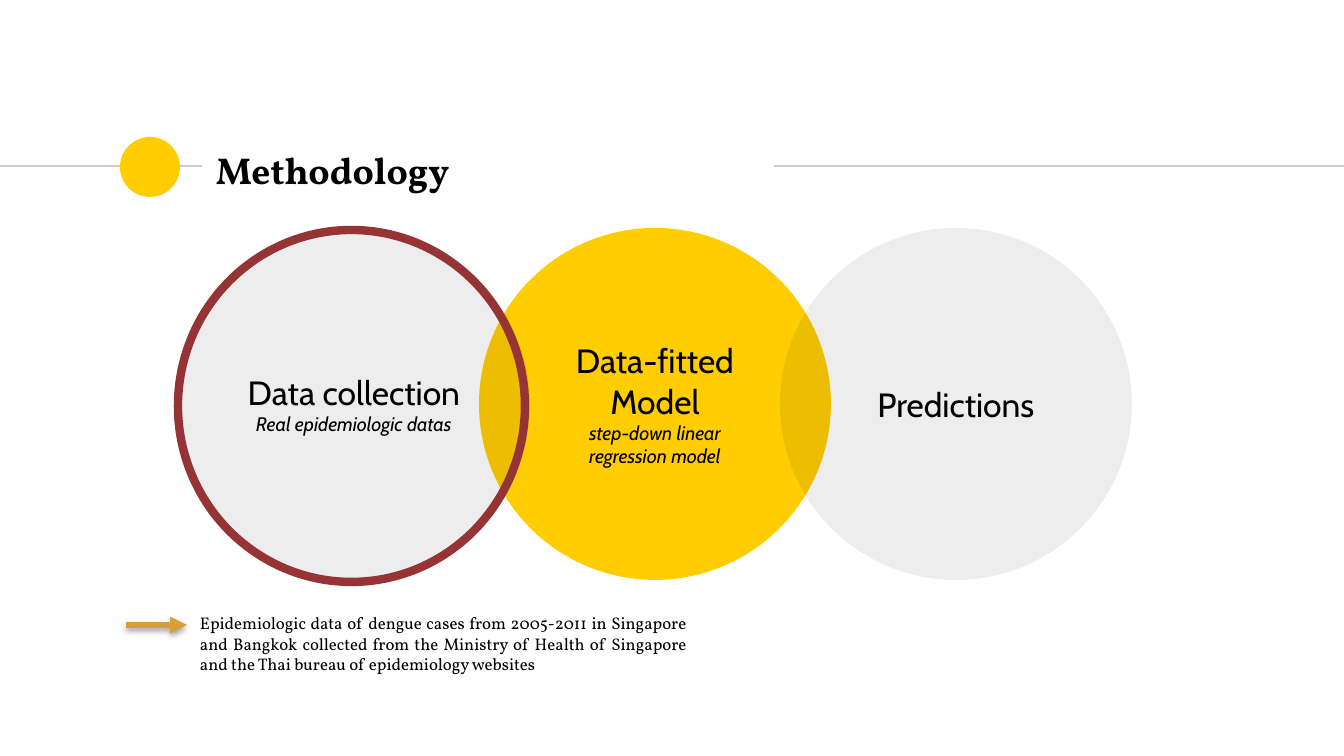
from dataclasses import dataclass
from typing import Optional

from lxml import etree
from pptx import Presentation
from pptx.dml.color import RGBColor
from pptx.enum import shapes, text
from pptx.oxml import ns
from pptx.util import Emu, Pt

EMU_PER_PX = 914400 / 134.4
BLACK = RGBColor(0x00, 0x00, 0x00)
YELLOW = RGBColor(0xFF, 0xCD, 0x00)
RULE_GREY = RGBColor(0xCC, 0xCC, 0xCC)
DARK_RED = RGBColor(0x96, 0x33, 0x34)
OCHRE = RGBColor(0xD8, 0x9F, 0x39)

STEP_LEFT, STEP_TOP, STEP_SIZE, STEP_PITCH = 178, 228, 352, 301
STEP_FONT = {"name": "Cabin", "size": Pt(18)}
DETAIL_FONT = {"name": "Cabin", "size": Pt(10.5), "italic": True}
TITLE_FONT = {"name": "Vollkorn", "size": Pt(20), "bold": True}
NOTE_FONT = {"name": "Vollkorn", "size": Pt(9)}


@dataclass(frozen=True)
class Box:
    left: int
    top: int
    width: int
    height: int

    def emu(self) -> tuple:
        return tuple(px(n) for n in (self.left, self.top, self.width, self.height))


@dataclass(frozen=True)
class Step:
    column: int
    heading: tuple
    detail: tuple
    fill: RGBColor
    opacity: int


STEPS = (
    Step(1, ("Data-fitted", "Model"), ("step-down linear", "regression model"), YELLOW, 100),
    Step(0, ("Data collection",), ("Real epidemiologic datas",), BLACK, 7),
    Step(2, ("Predictions",), (), BLACK, 7),
)
NOTE = (
    "Epidemiologic data of dengue cases from 2005-2011 in Singapore and Bangkok "
    "collected from the Ministry of Health of Singapore and the Thai bureau of "
    "epidemiology websites"
)


def px(length: int) -> Emu:
    return Emu(round(length * EMU_PER_PX))


def add_node(parent, tag: str, **attributes):
    return etree.SubElement(parent, ns.qn(tag), {k: str(v) for k, v in attributes.items()})


def write_lines(frame, lines, align, anchor, inset: int = 13) -> None:
    frame_format = {
        "word_wrap": True,
        "auto_size": text.MSO_AUTO_SIZE.NONE,
        "vertical_anchor": anchor,
    }
    for side in ("left", "right", "top", "bottom"):
        frame_format[f"margin_{side}"] = px(inset)
    for name, value in frame_format.items():
        setattr(frame, name, value)
    for index, (wording, font_format) in enumerate(lines):
        paragraph = frame.add_paragraph() if index else frame.paragraphs[0]
        paragraph.alignment = align
        run = paragraph.add_run()
        run.text = wording
        for name, value in font_format.items():
            setattr(run.font, name, value)
        run.font.color.rgb = BLACK


def add_circle(slide, box: Box, fill: Optional[RGBColor] = None, opacity: int = 100):
    circle = slide.shapes.add_shape(shapes.MSO_SHAPE.OVAL, *box.emu())
    circle.shadow.inherit = False
    circle.line.fill.background()
    if fill is None:
        circle.fill.background()
        return circle
    circle.fill.solid()
    circle.fill.fore_color.rgb = fill
    if opacity < 100:
        colour = circle._element.spPr.find(ns.qn("a:solidFill"))[0]
        add_node(colour, "a:alpha", val=opacity * 1000)
    return circle


def add_line(slide, start: int, end: int, y: int, colour: RGBColor, weight: float):
    line = slide.shapes.add_connector(
        shapes.MSO_CONNECTOR.STRAIGHT, px(start), px(y), px(end), px(y)
    )
    line.line.color.rgb = colour
    line.line.width = Pt(weight)
    effects = add_node(line._element.spPr, "a:effectLst")
    return line, effects


def add_step(slide, step: Step) -> None:
    box = Box(STEP_LEFT + STEP_PITCH * step.column, STEP_TOP, STEP_SIZE, STEP_SIZE)
    circle = add_circle(slide, box, step.fill, step.opacity)
    lines = [(line, STEP_FONT) for line in step.heading]
    lines += [(line, DETAIL_FONT) for line in step.detail]
    write_lines(circle.text_frame, lines, text.PP_ALIGN.CENTER, text.MSO_ANCHOR.MIDDLE)


def add_arrow(slide, start: int, end: int, y: int) -> None:
    arrow, effects = add_line(slide, start, end, y, OCHRE, 3)
    add_node(arrow.line._get_or_add_ln(), "a:tailEnd", type="triangle")
    shadow = add_node(
        effects, "a:outerShdw", blurRad=Pt(3.1), dist=Pt(1.8), dir=90 * 60000, rotWithShape=0
    )
    add_node(add_node(shadow, "a:srgbClr", val=BLACK), "a:alpha", val=35000)


def main() -> None:
    deck = Presentation()
    deck.slide_width, deck.slide_height = px(1344), px(756)
    slide = deck.slides.add_slide(deck.slide_layouts[5])

    add_line(slide, 0, 202, 166, RULE_GREY, 0.75)
    add_circle(slide, Box(120, 137, 60, 60), YELLOW)
    add_line(slide, 774, 1344, 166, RULE_GREY, 0.75)

    title = slide.shapes.title
    title.left, title.top, title.width, title.height = Box(203, 137, 570, 65).emu()
    write_lines(
        title.text_frame,
        [("Methodology", TITLE_FONT)],
        text.PP_ALIGN.LEFT,
        text.MSO_ANCHOR.MIDDLE,
    )

    for step in STEPS:
        add_step(slide, step)
    current_step = add_circle(slide, Box(178, 230, 347, 352))
    current_step.line.color.rgb = DARK_RED
    current_step.line.width = Pt(4.5)

    note = slide.shapes.add_textbox(*Box(187, 606, 512, 75).emu())
    write_lines(
        note.text_frame,
        [(NOTE, NOTE_FONT)],
        text.PP_ALIGN.JUSTIFY,
        text.MSO_ANCHOR.TOP,
        inset=13,
    )
    note.text_frame.margin_top = note.text_frame.margin_bottom = px(7)
    add_arrow(slide, 126, 187, 625)

    deck.save("out.pptx")


if __name__ == "__main__":
    main()
